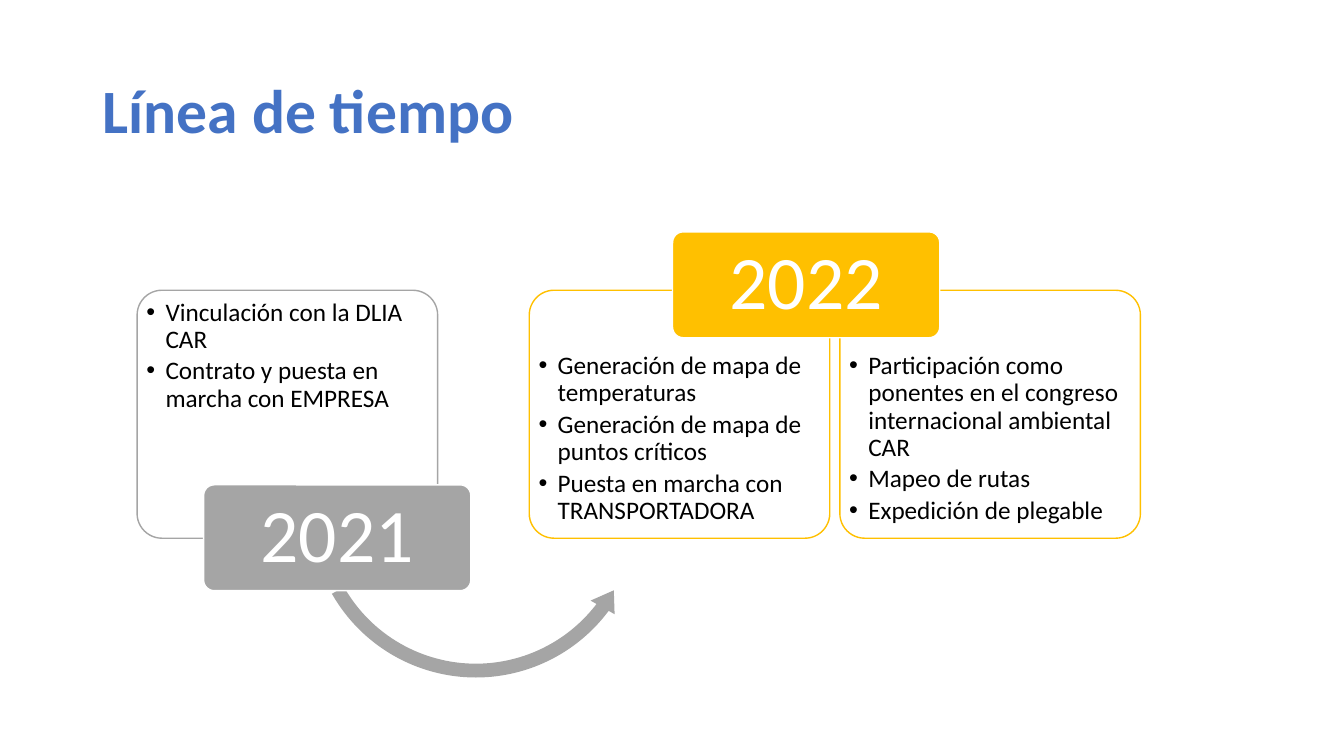
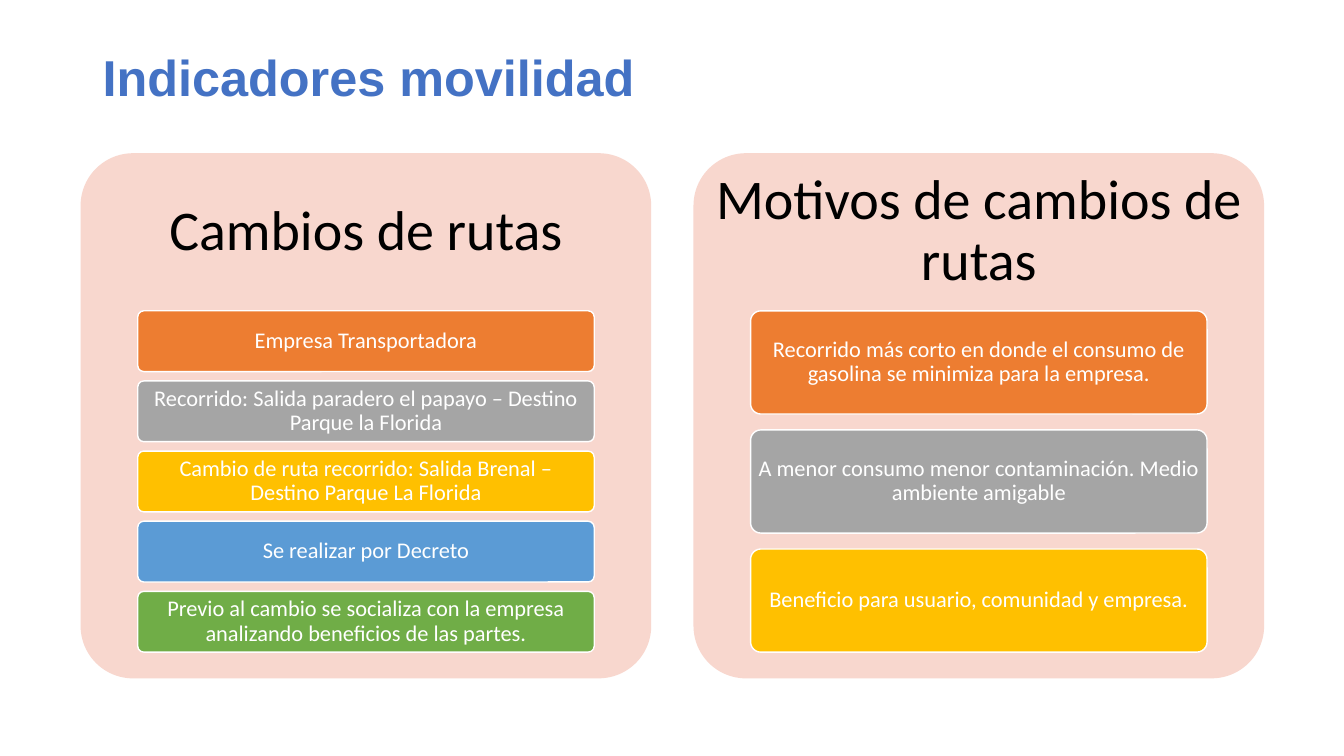
from lxml.etree import SubElement
from pptx import Presentation
from pptx.dml.color import RGBColor
from pptx.enum.shapes import MSO_SHAPE
from pptx.enum.text import MSO_ANCHOR, PP_ALIGN
from pptx.oxml.ns import qn
from pptx.util import Inches, Pt

COLORS = {
    "title": "4472C4", "white": "FFFFFF", "black": "000000", "gray": "A5A5A5",
    "gold": "FFC000", "orange": "ED7D31", "blue": "5B9BD5", "green": "70AD47",
    "peach": "F8D7CE",
}
BODY_FONT = "Calibri"
TITLE_LEFT, TITLE_WIDTH, TITLE_HEIGHT = 6.9, 86.27, 19.33
BULLET_INDENT = Inches(0.19)

presentation = Presentation()
presentation.slide_width = Inches(13.33)
presentation.slide_height = Inches(7.5)
blank_layout = presentation.slide_layouts[6]


def add_box(slide, area, kind=None, fill=None, line=None):
    """Add a preset shape, or a text box without kind; area is in percent of the slide."""
    sides = (presentation.slide_width, presentation.slide_height) * 2
    place = [int(side * share / 100) for side, share in zip(sides, area)]
    if kind is None:
        return slide.shapes.add_textbox(*place)
    shape = slide.shapes.add_shape(kind, *place)
    shape.shadow.inherit = False
    shape.fill.solid()
    shape.fill.fore_color.rgb = RGBColor.from_string(COLORS[fill])
    if line:
        shape.line.color.rgb = RGBColor.from_string(COLORS[line])
        shape.line.width = Pt(1)
    else:
        shape.line.fill.background()
    if kind == MSO_SHAPE.ROUNDED_RECTANGLE:
        shape.adjustments[0] = 0.1
    return shape


def write(shape, texts, size, color, font=BODY_FONT, bold=False, insets=(0.1, 0.05, 0.1, 0.05),
          align=PP_ALIGN.CENTER, anchor=MSO_ANCHOR.MIDDLE, bullets=False):
    """Write one paragraph per text; insets are left, top, right, bottom in inches."""
    frame = shape.text_frame
    frame.word_wrap = True
    frame.vertical_anchor = anchor
    frame.margin_left, frame.margin_top, frame.margin_right, frame.margin_bottom = map(Inches, insets)
    for index, text in enumerate(texts):
        paragraph = frame.add_paragraph() if index else frame.paragraphs[0]
        if bullets:
            properties = paragraph._p.get_or_add_pPr()
            properties.set("marL", str(BULLET_INDENT))
            properties.set("indent", str(-BULLET_INDENT))
            SubElement(properties, qn("a:buFont"), typeface="Arial")
            SubElement(properties, qn("a:buChar"), char="•")
            paragraph.space_after = Pt(3)
        paragraph.alignment = align
        paragraph.line_spacing = 0.9
        run = paragraph.add_run()
        run.text = text
        run.font.name = font
        run.font.size = Pt(size)
        run.font.bold = bold
        run.font.color.rgb = RGBColor.from_string(COLORS[color])


# Slides and their titles
slides = []
for title, top, size, font in [
    ("Línea de tiempo", 5.33, 44, BODY_FONT),
    ("Indicadores movilidad", 0.93, 36, "Arial"),
]:
    slide = presentation.slides.add_slide(blank_layout)
    title_box = add_box(slide, (TITLE_LEFT, top, TITLE_WIDTH, TITLE_HEIGHT))
    write(title_box, [title], size, "title", font, bold=True, align=PP_ALIGN.LEFT)
    slides.append(slide)
timeline, indicators = slides

# Timeline: event panels, with room left for the year badge
for left, color, top_inset, events in [
    (10.2, "gray", 0.02, ["Vinculación con la DLIA CAR",
                          "Contrato y puesta en marcha con EMPRESA"]),
    (39.38, "gold", 0.55, ["Generación de mapa de temperaturas",
                           "Generación de mapa de puntos críticos",
                           "Puesta en marcha con TRANSPORTADORA"]),
    (62.49, "gold", 0.55, ["Participación como ponentes en el congreso internacional ambiental CAR",
                           "Mapeo de rutas",
                           "Expedición de plegable"]),
]:
    panel = add_box(timeline, (left, 38.4, 22.36, 32.8), MSO_SHAPE.ROUNDED_RECTANGLE, "white", color)
    write(panel, events, 18, "black", insets=(0.02, top_inset, 0.02, 0.02),
          align=PP_ALIGN.LEFT, anchor=MSO_ANCHOR.TOP, bullets=True)

# Timeline: curved arrow from one year to the next
arrow = add_box(timeline, (22.58, 44.93, 25.66, 45.6), MSO_SHAPE.LEFT_CIRCULAR_ARROW, "gray")
for index, value in enumerate([0.04, 4.43, 22.18, 90.24, 0.04]):
    arrow.adjustments[index] = value

# Timeline: year badges
for year, left, top, color in [("2021", 15.15, 64.13, "gray"), ("2022", 50.04, 30.67, "gold")]:
    badge = add_box(timeline, (left, top, 19.88, 14), MSO_SHAPE.ROUNDED_RECTANGLE, color, "white")
    write(badge, [year], 54, "white")

# Indicators: two panels, each with a heading and a stack of tiles
PANEL_TOP, PANEL_WIDTH, PANEL_HEIGHT = 20.27, 42.46, 69.47
HEADING_HEIGHT = 0.3 * PANEL_HEIGHT
STACK_HEIGHT = 0.65 * PANEL_HEIGHT
GAP_RATIO = 2 / 13
TILE_COLORS = ["orange", "gray", "gold", "blue", "green"]

for left, heading, statements in [
    (6, "Cambios de rutas", [
        "Empresa Transportadora",
        "Recorrido: Salida paradero el papayo – Destino Parque la Florida",
        "Cambio de ruta recorrido: Salida Brenal – Destino Parque La Florida",
        "Se realizar por Decreto",
        "Previo al cambio se socializa con la empresa analizando beneficios de las partes.",
    ]),
    (51.6, "Motivos de cambios de rutas", [
        "Recorrido más corto en donde el consumo de gasolina se minimiza para la empresa.",
        "A menor consumo menor contaminación. Medio ambiente amigable",
        "Beneficio para usuario, comunidad y empresa.",
    ]),
]:
    add_box(indicators, (left, PANEL_TOP, PANEL_WIDTH, PANEL_HEIGHT), MSO_SHAPE.ROUNDED_RECTANGLE, "peach")
    heading_box = add_box(indicators, (left, PANEL_TOP, PANEL_WIDTH, HEADING_HEIGHT))
    write(heading_box, [heading], 40, "black", insets=(0.17,) * 4)

    count = len(statements)
    tile_height = STACK_HEIGHT / (count + (count - 1) * GAP_RATIO)
    for row, (statement, color) in enumerate(zip(statements, TILE_COLORS)):
        tile_top = PANEL_TOP + HEADING_HEIGHT + row * tile_height * (1 + GAP_RATIO)
        tile_area = (left + 0.1 * PANEL_WIDTH, tile_top, 0.8 * PANEL_WIDTH, tile_height)
        tile = add_box(indicators, tile_area, MSO_SHAPE.ROUNDED_RECTANGLE, color, "white")
        write(tile, [statement], 16, "white", insets=(0.03,) * 4)

presentation.save("out.pptx")
